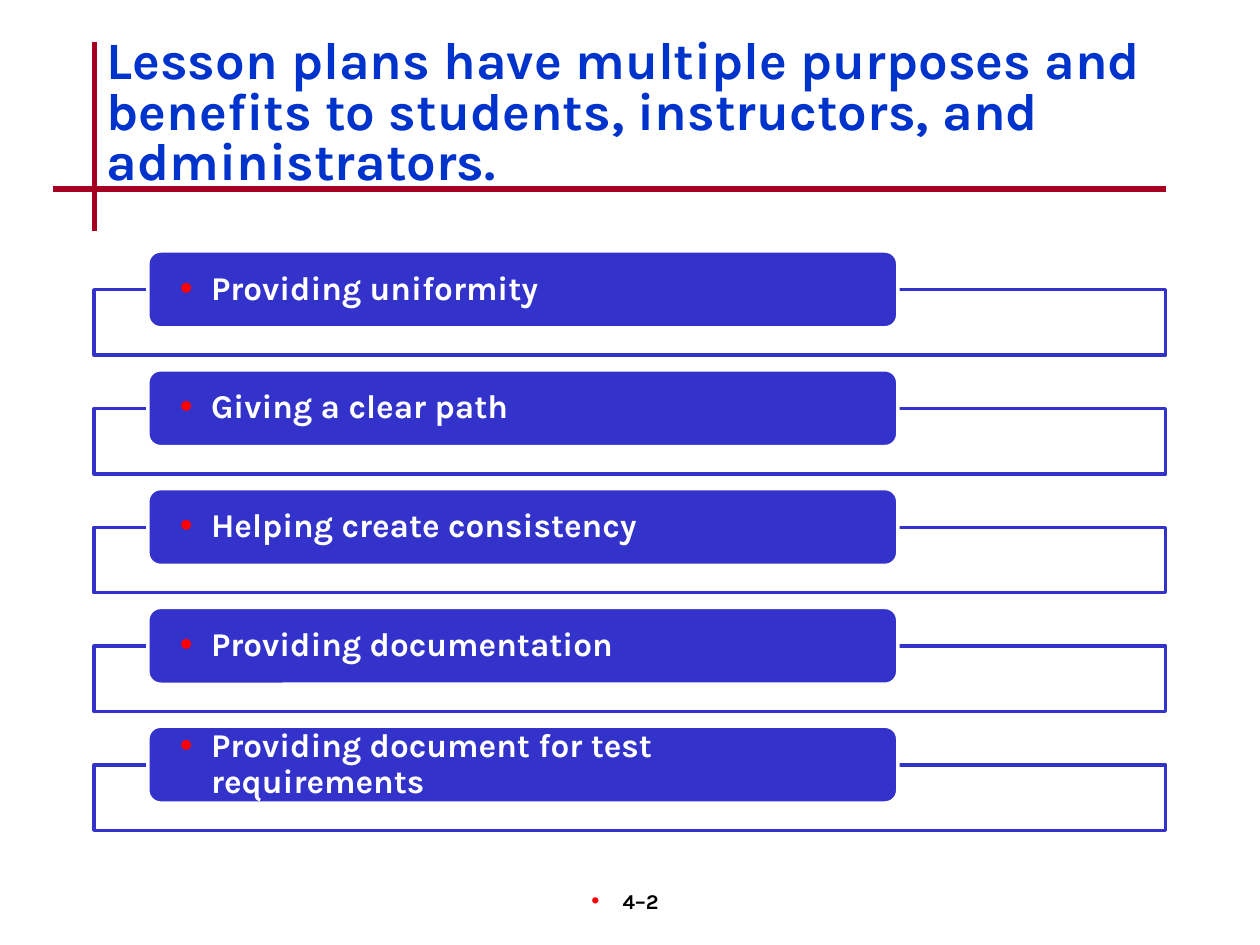
from lxml import etree
from pptx import Presentation
from pptx import util as u
from pptx.dml.color import RGBColor
from pptx.enum import shapes, text
from pptx.oxml.ns import qn

COLORS = {
    "title": "0033CC",
    "rule": "A50021",
    "bar": "3333CC",
    "bullet": "FF0000",
    "white": "FFFFFF",
    "black": "000000",
}
FONT = "Karla"
PURPOSES = [
    "Providing uniformity",
    "Giving a clear path",
    "Helping create consistency",
    "Providing documentation",
    "Providing document for test requirements",
]


def color(name):
    return RGBColor.from_string(COLORS[name])


def add_bullet(paragraph, indent=0.63):
    properties = paragraph._p.get_or_add_pPr()
    properties.set("marL", str(u.Cm(indent)))
    properties.set("indent", str(-u.Cm(indent)))
    bullet_color = etree.SubElement(properties, qn("a:buClr"))
    etree.SubElement(bullet_color, qn("a:srgbClr"), val=COLORS["bullet"])
    etree.SubElement(properties, qn("a:buSzPct"), val="110000")
    etree.SubElement(properties, qn("a:buFont"), typeface="Arial")
    etree.SubElement(properties, qn("a:buChar"), char="•")


def write(shape, words, size, ink, align=text.PP_ALIGN.LEFT,
          anchor=text.MSO_ANCHOR.MIDDLE, spacing=1.0, bullet=False,
          insets=(0.25, 0.13, 0.25, 0.13)):
    """Fill a shape with one paragraph; insets are left, top, right, bottom in cm."""
    frame = shape.text_frame
    frame.word_wrap = True
    frame.vertical_anchor = anchor
    (frame.margin_left, frame.margin_top,
     frame.margin_right, frame.margin_bottom) = map(u.Cm, insets)
    paragraph = frame.paragraphs[0]
    paragraph.alignment = align
    paragraph.line_spacing = spacing
    if bullet:
        add_bullet(paragraph)
    run = paragraph.add_run()
    run.text = words
    run.font.name = FONT
    run.font.size = u.Pt(size)
    run.font.bold = True
    run.font.color.rgb = color(ink)


def add_rule(slide, x1, y1, x2, y2):
    rule = slide.shapes.add_connector(
        shapes.MSO_CONNECTOR.STRAIGHT, *map(u.Cm, (x1, y1, x2, y2)))
    rule.line.color.rgb = color("rule")
    rule.line.width = u.Pt(3)
    etree.SubElement(rule._element.spPr, qn("a:effectLst"))


def add_panel(slide, kind, box, fill, outline):
    panel = slide.shapes.add_shape(kind, *map(u.Cm, box))
    panel.shadow.inherit = False
    panel.fill.solid()
    panel.fill.fore_color.rgb = color(fill)
    panel.line.color.rgb = color(outline)
    panel.line.width = u.Pt(2)
    return panel


def add_heading(slide, left, top, width, height):
    """Title with the crossed rules at its lower left corner."""
    add_rule(slide, left, top + 0.21, left, top + 4.02)
    add_rule(slide, left - 0.84, top + 3.18, left + width, top + 3.18)
    title = slide.shapes.add_textbox(*map(u.Cm, (left, top, width, height)))
    write(title, "Lesson plans have multiple purposes and benefits to "
          "students, instructors, and administrators.", 30, "title", spacing=0.8)


def add_purposes(slide, left, top, width, pitch=2.395):
    for row, purpose in enumerate(PURPOSES):
        y = top + row * pitch
        frame = add_panel(slide, shapes.MSO_SHAPE.RECTANGLE,
                          (left, y + 0.78, width, 1.32), "white", "bar")
        alpha = etree.SubElement(
            frame._element.spPr.find(".//" + qn("a:srgbClr")), qn("a:alpha"))
        alpha.set("val", "90000")
        label = add_panel(slide, shapes.MSO_SHAPE.ROUNDED_RECTANGLE,
                          (left + 1.08, y, width * 0.7, 1.55), "bar", "white")
        write(label, purpose, 19, "white", spacing=0.9, bullet=True,
              insets=(0.57, 0, 0.57, 0))


def add_page_number(slide, left, top, width, height):
    number = slide.shapes.add_textbox(*map(u.Cm, (left, top, width, height)))
    write(number, "4–2", 12, "black", align=text.PP_ALIGN.CENTER,
          anchor=text.MSO_ANCHOR.TOP, bullet=True)


def main():
    deck = Presentation()
    deck.slide_width, deck.slide_height = u.Cm(25.4), u.Cm(19.05)
    slide = deck.slides.add_slide(deck.slide_layouts[6])
    add_heading(slide, 1.9, 0.63, 21.6, 3.38)
    add_purposes(slide, 1.9, 5.06, 21.6)
    add_page_number(slide, 9.95, 17.78, 5.3, 1.27)
    deck.save("out.pptx")


if __name__ == "__main__":
    main()
